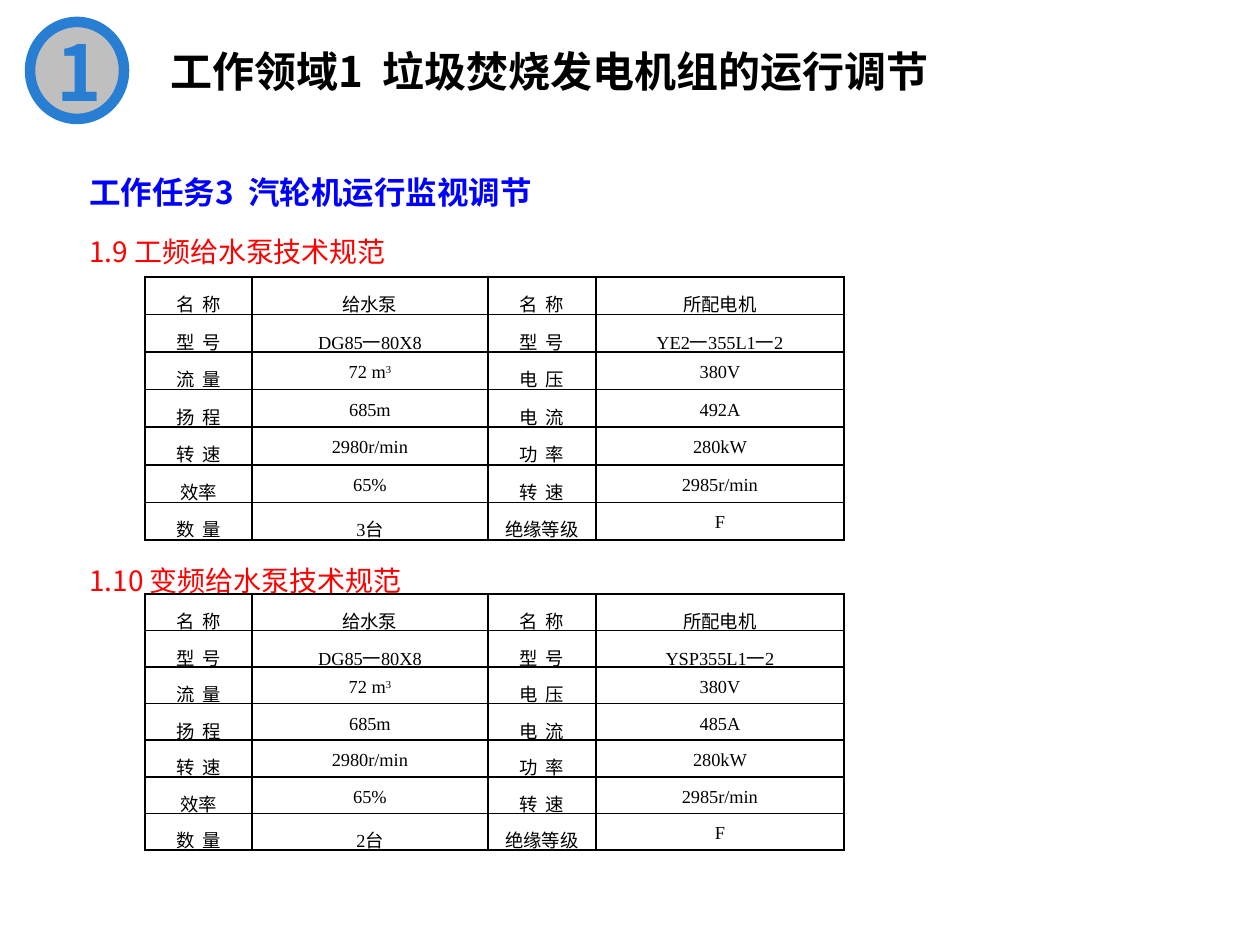
from lxml.etree import SubElement
from pptx import Presentation
from pptx.dml.color import RGBColor
from pptx.enum.shapes import MSO_SHAPE
from pptx.enum.text import MSO_ANCHOR, MSO_AUTO_SIZE, PP_ALIGN
from pptx.oxml.ns import qn
from pptx.util import Emu, Pt

PX = 914400 // 126
SANS, SERIF = "Noto Sans CJK SC", "Times New Roman"
BLACK, BLUE, RED, ACCENT, GREY = "000000", "0000FF", "FF0000", "287ED3", "BFBFBF"

# text, box in px, size, bold, colour, line spacing, wrap
HEADINGS = [
    ("工作领域1  垃圾焚烧发电机组的运行调节", (158, 39, 842, 63), 24, True, BLACK, None, True),
    ("工作任务3  汽轮机运行监视调节", (77, 156, 490, 55), 18, True, BLUE, Pt(28), False),
    ("1.9 工频给水泵技术规范", (77, 212, 1116, 107), 16, False, RED, 1.5, True),
    ("1.10 变频给水泵技术规范", (77, 541, 1116, 107), 16, False, RED, 1.5, True),
]
COLUMN_WIDTHS = (107, 236, 108, 248)
TABLE_LEFT = 145
# top, height, motor model, motor current, number of pumps
PUMP_TABLES = [
    (277, 263, "YE2一355L1一2", "492A", "3台"),
    (594, 256, "YSP355L1一2", "485A", "2台"),
]
SUPERSCRIPTS = {"72 m": "3"}


def pump_rows(model, current, count):
    return [
        ("名  称", "给水泵", "名  称", "所配电机"),
        ("型  号", "DG85一80X8", "型  号", model),
        ("流  量", "72 m", "电  压", "380V"),
        ("扬  程", "685m", "电  流", current),
        ("转  速", "2980r/min", "功  率", "280kW"),
        ("效率", "65%", "转  速", "2985r/min"),
        ("数  量", count, "绝缘等级", "F"),
    ]


def px(*lengths):
    return [Emu(round(length * PX)) for length in lengths]


def rgb(colour):
    return RGBColor.from_string(colour)


def add_run(paragraph, text, size, colour, latin=SANS, bold=False):
    run = paragraph.add_run()
    run.text = text
    font = run.font
    font.size, font.bold, font.name = Pt(size), bold, latin
    font.color.rgb = rgb(colour)
    SubElement(font._element, qn("a:ea"), typeface=SANS)
    return run


def add_badge(slide):
    badge = slide.shapes.add_shape(MSO_SHAPE.OVAL, *px(30, 22, 94, 97))
    badge.shadow.inherit = False
    badge.fill.solid()
    badge.fill.fore_color.rgb = rgb(GREY)
    badge.line.color.rgb = rgb(ACCENT)
    badge.line.width = Pt(6)
    frame = badge.text_frame
    frame.vertical_anchor = MSO_ANCHOR.MIDDLE
    paragraph = frame.paragraphs[0]
    paragraph.alignment = PP_ALIGN.CENTER
    add_run(paragraph, "1", 44, ACCENT, bold=True)


def add_heading(slide, text, box, size, bold, colour, spacing, wrap):
    frame = slide.shapes.add_textbox(*px(*box)).text_frame
    frame.word_wrap = wrap
    frame.auto_size = MSO_AUTO_SIZE.SHAPE_TO_FIT_TEXT
    paragraph = frame.paragraphs[0]
    paragraph.line_spacing = spacing
    add_run(paragraph, text, size, colour, bold=bold)


def style_cell(cell):
    """Black 1 pt border on all sides, no fill, narrow side margins."""
    cell.margin_left, cell.margin_right = px(9, 9)
    cell.margin_top = cell.margin_bottom = 0
    properties = cell._tc.get_or_add_tcPr()
    for side in ("lnL", "lnR", "lnT", "lnB"):
        line = SubElement(properties, qn(f"a:{side}"), w=str(Pt(1)))
        SubElement(SubElement(line, qn("a:solidFill")), qn("a:srgbClr"), val=BLACK)
    cell.fill.background()


def add_pump_table(slide, top, height, model, current, count):
    rows = pump_rows(model, current, count)
    frame = slide.shapes.add_table(
        len(rows), len(COLUMN_WIDTHS), *px(TABLE_LEFT, top, sum(COLUMN_WIDTHS), height))
    table = frame.table
    table.first_row = table.horz_banding = False
    for column, width in zip(table.columns, px(*COLUMN_WIDTHS)):
        column.width = width
    for row_index, texts in enumerate(rows):
        table.rows[row_index].height = px(height / len(rows))[0]
        for column_index, text in enumerate(texts):
            cell = table.cell(row_index, column_index)
            style_cell(cell)
            paragraph = cell.text_frame.paragraphs[0]
            paragraph.alignment = PP_ALIGN.CENTER
            paragraph.line_spacing = 1.5
            add_run(paragraph, text, 10.5, BLACK, SERIF)
            if text in SUPERSCRIPTS:
                raised = add_run(paragraph, SUPERSCRIPTS[text], 10.5, BLACK, SERIF)
                raised.font._element.set("baseline", "30000")


def main():
    presentation = Presentation()
    presentation.slide_width, presentation.slide_height = px(1260, 945)
    slide = presentation.slides.add_slide(presentation.slide_layouts[6])
    add_badge(slide)
    for heading in HEADINGS:
        add_heading(slide, *heading)
    for pump_table in PUMP_TABLES:
        add_pump_table(slide, *pump_table)
    presentation.save("out.pptx")


if __name__ == "__main__":
    main()
